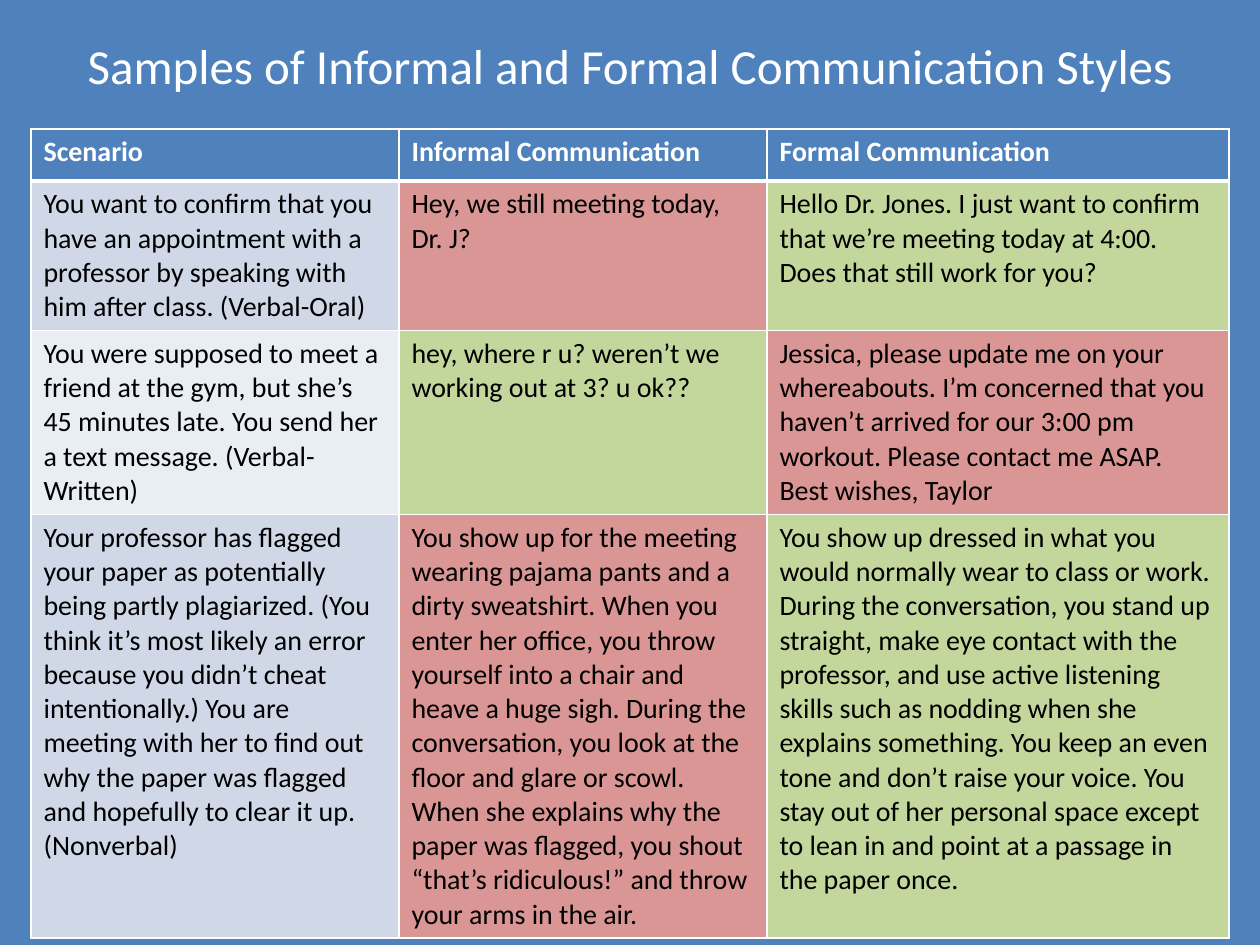
"""Build a slide with a table comparing informal and formal communication."""
from lxml.etree import SubElement
from pptx import Presentation
from pptx.dml.color import RGBColor
from pptx.enum.text import MSO_ANCHOR, PP_ALIGN
from pptx.oxml.ns import qn
from pptx.util import Pt

TITLE = "Samples of Informal and Formal Communication Styles"
HEADINGS = ("Scenario", "Informal Communication", "Formal Communication")
SCENARIOS = [
    ("You want to confirm that you have an appointment with a professor by speaking with "
     "him after class. (Verbal-Oral)",
     "Hey, we still meeting today, Dr. J?",
     "Hello Dr. Jones. I just want to confirm that we’re meeting today at 4:00. Does that "
     "still work for you?"),
    ("You were supposed to meet a friend at the gym, but she’s 45 minutes late. You send "
     "her a text message. (Verbal-Written)",
     "hey, where r u? weren’t we working out at 3? u ok??",
     "Jessica, please update me on your whereabouts. I’m concerned that you haven’t arrived "
     "for our 3:00 pm workout. Please contact me ASAP. Best wishes, Taylor"),
    ("Your professor has flagged your paper as potentially being partly plagiarized. (You "
     "think it’s most likely an error because you didn’t cheat intentionally.) You are "
     "meeting with her to find out why the paper was flagged and hopefully to clear it up. "
     "(Nonverbal)",
     "You show up for the meeting wearing pajama pants and a dirty sweatshirt. When you "
     "enter her office, you throw yourself into a chair and heave a huge sigh. During the "
     "conversation, you look at the floor and glare or scowl. When she explains why the "
     "paper was flagged, you shout “that’s ridiculous!” and throw your arms in the air.",
     "You show up dressed in what you would normally wear to class or work. During the "
     "conversation, you stand up straight, make eye contact with the professor, and use "
     "active listening skills such as nodding when she explains something. You keep an even "
     "tone and don’t raise your voice. You stay out of her personal space except to lean in "
     "and point at a passage in the paper once."),
]
BLUE, WHITE, BLACK = "4F81BD", "FFFFFF", "000000"
BAND, LIGHT_BAND, UNSUITABLE, SUITABLE = "D0D8E8", "E9EDF4", "D99694", "C3D69B"
FILLS = [
    (BLUE, BLUE, BLUE),
    (BAND, UNSUITABLE, SUITABLE),
    (LIGHT_BAND, SUITABLE, UNSUITABLE),
    (BAND, UNSUITABLE, SUITABLE),
]
COLUMN_WIDTHS = (368, 368, 462)
ROW_HEIGHTS = (52, 149, 184, 423)


def px(length):
    return round(length * 914400 / 126)


def color(hex_code):
    return RGBColor.from_string(hex_code)


def style_font(paragraph, size, hex_code, bold=False):
    font = paragraph.font
    font.name, font.size, font.bold = "Calibri", Pt(size), bold
    font.color.rgb = color(hex_code)


def add_borders(cell, top, bottom):
    properties = cell._tc.get_or_add_tcPr()
    widths = {"a:lnL": 1, "a:lnR": 1, "a:lnT": top, "a:lnB": bottom}
    for position, (side, width) in enumerate(widths.items()):
        line = SubElement(properties, qn(side), w=str(Pt(width)))
        SubElement(SubElement(line, qn("a:solidFill")), qn("a:srgbClr"), val=WHITE)
        properties.insert(position, line)


def add_title(slide):
    title = slide.shapes.title
    title.left, title.top, title.width, title.height = map(px, (63, 16, 1134, 98))
    title.text_frame.text = TITLE
    title.text_frame.vertical_anchor = MSO_ANCHOR.MIDDLE
    heading = title.text_frame.paragraphs[0]
    heading.alignment = PP_ALIGN.CENTER
    style_font(heading, 28, WHITE)


def add_comparison(slide):
    rows = [HEADINGS, *SCENARIOS]
    table = slide.shapes.add_table(
        len(rows), len(HEADINGS), px(31), px(129),
        px(sum(COLUMN_WIDTHS)), px(sum(ROW_HEIGHTS))).table
    for column, width in zip(table.columns, COLUMN_WIDTHS):
        column.width = px(width)
    for r, (texts, fills) in enumerate(zip(rows, FILLS)):
        table.rows[r].height = px(ROW_HEIGHTS[r])
        for c, (text, fill) in enumerate(zip(texts, fills)):
            cell = table.cell(r, c)
            cell.text = text
            cell.fill.solid()
            cell.fill.fore_color.rgb = color(fill)
            style_font(cell.text_frame.paragraphs[0], 16, BLACK if r else WHITE, bold=r == 0)
            add_borders(cell, top=3 if r == 1 else 1, bottom=3 if r == 0 else 1)


def main():
    deck = Presentation()
    deck.slide_width, deck.slide_height = px(1260), px(945)
    slide = deck.slides.add_slide(deck.slide_layouts[5])
    slide.background.fill.solid()
    slide.background.fill.fore_color.rgb = color(BLUE)
    add_title(slide)
    add_comparison(slide)
    deck.save("out.pptx")


if __name__ == "__main__":
    main()
